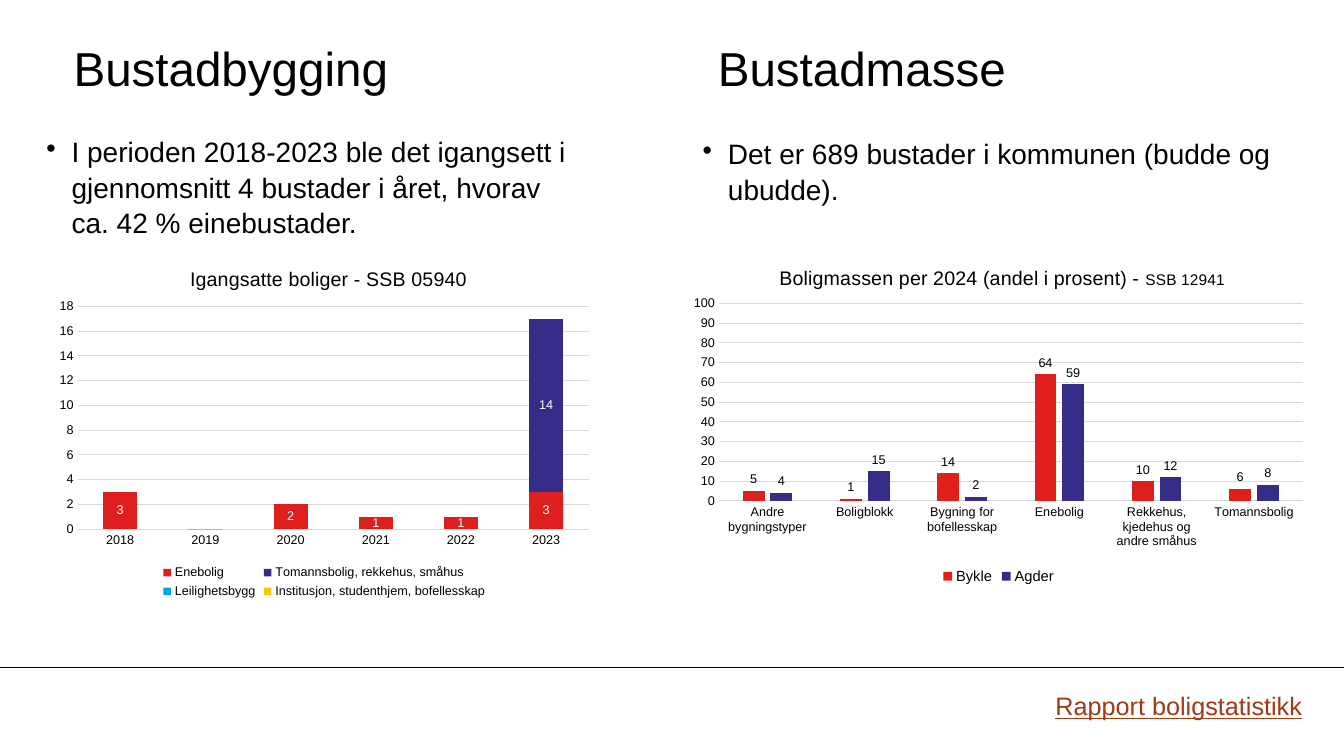
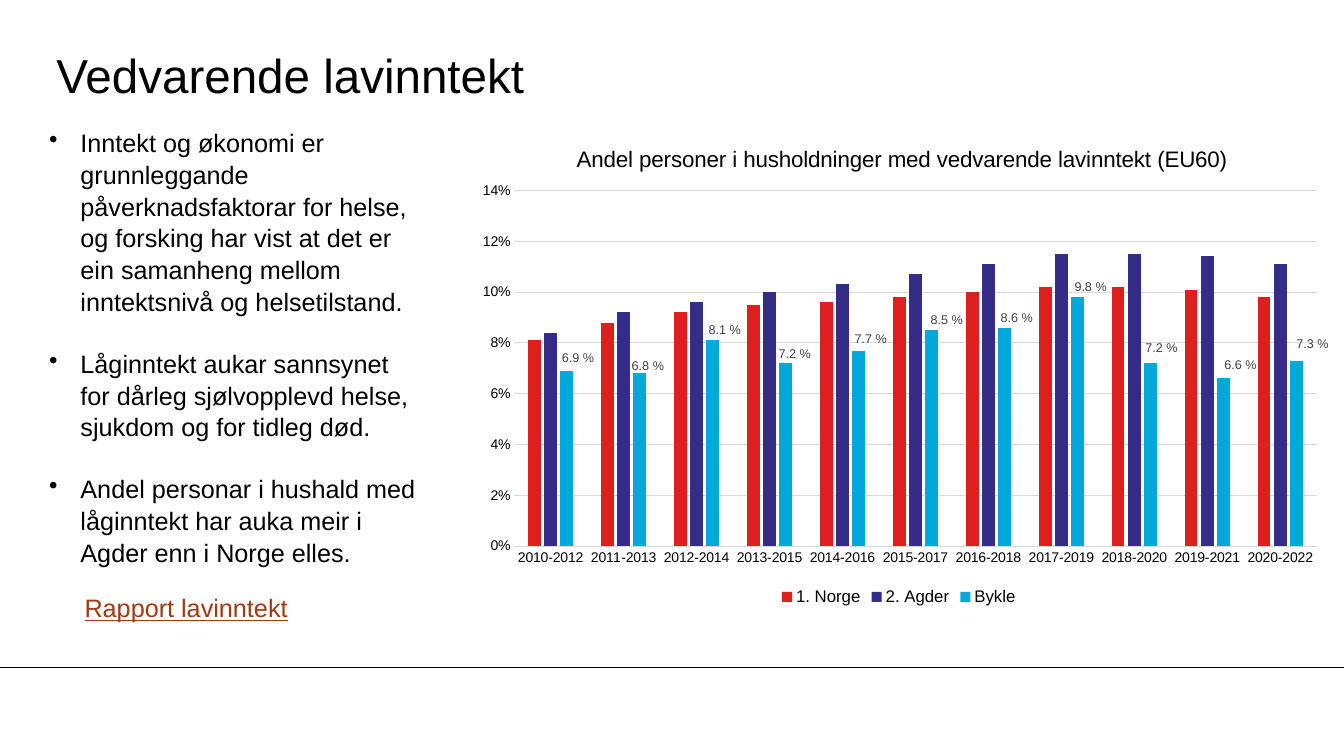
import pptx
import pptx.chart.data
import pptx.dml.color
import pptx.enum.chart
import pptx.enum.shapes
import pptx.enum.text
import pptx.oxml
import pptx.oxml.ns
import pptx.util
from lxml import etree

Inches, Pt = pptx.util.Inches, pptx.util.Pt
XL = pptx.enum.chart
ANCHOR = pptx.enum.text.MSO_ANCHOR

WIDTH, HEIGHT = 13.33, 7.5
FOOTER_LINE = 6.62
FONT = "Arial"
COLORS = {
    "text": "000000", "link": "9F3A14", "grid": "D9D9D9", "white": "FFFFFF", "label": "404040",
    "red": "DF1F1D", "indigo": "342C86", "cyan": "00A9DA", "yellow": "FAC800",
}
SERIES_COLORS = ("red", "indigo", "cyan", "yellow")

# Boxes are (left, top, width, height) in inches on the slide.
SLIDES = [
    {
        "title": ("Bustadbygging", (0.73, 0.29, 4.97, 0.75)),
        "second_title": ("Bustadmasse", (7.12, 0.29, 4.97, 0.75)),
        "bullets": [
            {"items": ["I perioden 2018-2023 ble det igangsett i gjennomsnitt 4 bustader "
                       "i året, hvorav ca. 42 % einebustader."],
             "box": (0.46, 1.32, 5.25, 1.11), "size": 20, "indent": 0.25, "inset": 0},
            {"items": ["Det er 689 bustader i kommunen (budde og ubudde)."],
             "box": (6.97, 1.34, 5.86, 0.84), "size": 20, "indent": 0.25, "inset": 0},
        ],
        "link": ("Rapport boligstatistikk", (10.37, 6.8, 2.65, 0.4)),
        "charts": [
            {
                "title": [("Igangsatte boliger - SSB 05940", 14)],
                "title_at": (1.85, 2.61),
                "box": (0.48, 2.43, 5.47, 3.55), "plot": (0.77, 3.04, 5.07, 2.21),
                "type": XL.XL_CHART_TYPE.COLUMN_STACKED, "gap": 150, "overlap": 100,
                "axis": (18, 2, "General"), "axis_size": 9, "legend_size": 9,
                "categories": ["2018", "2019", "2020", "2021", "2022", "2023"],
                "series": {
                    "Enebolig": (3, 0, 2, 1, 1, 3),
                    "Tomannsbolig, rekkehus, småhus": (0, 0, 0, 0, 0, 14),
                    "Leilighetsbygg": (0,) * 6,
                    "Institusjon, studenthjem, bofellesskap": (0,) * 6,
                },
                "labels": {"series": ("Enebolig", "Tomannsbolig, rekkehus, småhus"),
                           "color": "white", "fmt": "0;;",
                           "position": XL.XL_LABEL_POSITION.CENTER},
            },
            {
                "title": [("Boligmassen per 2024 (andel i prosent) - ", 14), ("SSB 12941", 11)],
                "title_at": (7.7, 2.61),
                "box": (6.76, 2.43, 6.29, 3.41), "plot": (7.13, 3.01, 5.79, 1.96),
                "type": XL.XL_CHART_TYPE.COLUMN_CLUSTERED, "gap": 219, "overlap": -27,
                "axis": (100, 10, "General"), "axis_size": 9, "legend_size": 10.5,
                "categories": ["Andre bygningstyper", "Boligblokk", "Bygning for bofellesskap",
                               "Enebolig", "Rekkehus, kjedehus og andre småhus", "Tomannsbolig"],
                "series": {"Bykle": (5, 1, 14, 64, 10, 6), "Agder": (4, 15, 2, 59, 12, 8)},
                "labels": {"series": ("Bykle", "Agder"), "color": "text", "fmt": "0",
                           "position": XL.XL_LABEL_POSITION.OUTSIDE_END},
            },
        ],
    },
    {
        "title": ("Vedvarende lavinntekt", (0.56, 0.36, 11.1, 0.75)),
        "bullets": [
            {"items": ["Inntekt og økonomi er grunnleggande påverknadsfaktorar for helse, og "
                       "forsking har vist at det er ein samanheng mellom inntektsnivå og "
                       "helsetilstand.",
                       "Låginntekt aukar sannsynet for dårleg sjølvopplevd helse, sjukdom og "
                       "for tidleg død.",
                       "Andel personar i hushald med låginntekt har auka meir i Agder enn i "
                       "Norge elles."],
             "box": (0.39, 1.2, 3.86, 4.34), "size": 18, "indent": 0.31, "inset": 1},
        ],
        "link": ("Rapport lavinntekt", (0.74, 5.83, 2.65, 0.4)),
        "charts": [
            {
                "title": [("Andel personer i husholdninger med vedvarende lavinntekt (EU60)", 16)],
                "title_at": (5.68, 1.4),
                "box": (4.61, 1.2, 8.61, 4.85), "plot": (5.1, 1.89, 7.96, 3.53),
                "type": XL.XL_CHART_TYPE.COLUMN_CLUSTERED, "gap": 219, "overlap": -27,
                "axis": (0.14, 0.02, "0%"), "axis_size": 10, "legend_size": 12,
                "categories": [f"{year}-{year + 2}" for year in range(2010, 2021)],
                "series": {
                    "1. Norge": [v / 1000 for v in
                                 (81, 88, 92, 95, 96, 98, 100, 102, 102, 101, 98)],
                    "2. Agder": [v / 1000 for v in
                                 (84, 92, 96, 100, 103, 107, 111, 115, 115, 114, 111)],
                    "Bykle": [v / 1000 for v in (69, 68, 81, 72, 77, 85, 86, 98, 72, 66, 73)],
                },
                "labels": {"series": ("Bykle",), "color": "label", "fmt": "0.0\\ %",
                           "position": XL.XL_LABEL_POSITION.OUTSIDE_END,
                           "shifts": [(0.11, -0.01), (0.08, 0.04), (0.12, 0.01), (0.09, 0.02),
                                      (0.12, 0), (0.15, 0.01), (0.12, 0.02), (0.13, 0.01),
                                      (0.11, -0.04), (0.17, -0.02), (0.16, -0.05)]},
            },
        ],
    },
]


def rgb(name):
    return pptx.dml.color.RGBColor.from_string(COLORS[name])


def inches(box):
    return [Inches(v) for v in box]


def style_font(font, size, color="text", underline=None):
    font.name, font.size, font.underline = FONT, Pt(size), underline
    font.color.rgb = rgb(color)


def write(tf, items, size, color="text", underline=None, anchor=ANCHOR.TOP, inset=1, indent=0):
    """Fill a text frame with one paragraph per item; an indent makes them bullets."""
    tf.word_wrap, tf.vertical_anchor = True, anchor
    tf.auto_size = pptx.enum.text.MSO_AUTO_SIZE.NONE
    tf.margin_left = tf.margin_right = Inches(0.1 * inset)
    tf.margin_top = tf.margin_bottom = Inches(0.05 * inset)
    for i, item in enumerate(items):
        p = tf.add_paragraph() if i else tf.paragraphs[0]
        p.alignment = pptx.enum.text.PP_ALIGN.LEFT
        if indent:
            pPr = p._p.get_or_add_pPr()
            pPr.set("marL", str(Inches(indent)))
            pPr.set("indent", str(-Inches(indent)))
            etree.SubElement(pPr, pptx.oxml.ns.qn("a:buChar")).set("char", "•")
            p.line_spacing = 1.05
            p.space_before = Pt(1.2 * size if i else 0)
        r = p.add_run()
        r.text = item
        style_font(r.font, size, color, underline)


def add_text(slide, items, box, size, **fmt):
    write(slide.shapes.add_textbox(*inches(box)).text_frame, items, size, **fmt)


def set_layout(parent, index, **values):
    """Give a chart element a manual layout, as child number index."""
    for old in parent.xpath("c:layout"):
        parent.remove(old)
    layout = pptx.oxml.parse_xml(
        f"<c:layout {pptx.oxml.ns.nsdecls('c')}><c:manualLayout/></c:layout>")
    for tag, value in values.items():
        etree.SubElement(layout[0], pptx.oxml.ns.qn(f"c:{tag}")).set("val", str(value))
    parent.insert(index, layout)


def add_labels(chart, series, size, color, fmt, position, shifts=()):
    """Show values on a series; shifts move single labels by shares of the chart."""
    labels = series.data_labels
    labels.show_value, labels.position = True, position
    labels.number_format, labels.number_format_is_linked = fmt, False
    style_font(labels.font, size, color)
    for i, (dx, dy) in enumerate(shifts):
        label = series.points[i].data_label
        style_font(label.font, size, color)
        label.position = position
        set_layout(chart._chartSpace.xpath(f"//c:dLbl[c:idx/@val='{i}']")[0], 1, x=dx, y=dy)


def style_axes(chart, size, axis):
    cat, val = chart.category_axis, chart.value_axis
    for ax in (cat, val):
        ax.major_tick_mark = ax.minor_tick_mark = XL.XL_TICK_MARK.NONE
        style_font(ax.tick_labels.font, size)
    val.minimum_scale = 0
    val.maximum_scale, val.major_unit, val.tick_labels.number_format = axis
    val.tick_labels.number_format_is_linked = False
    val.format.line.fill.background()
    for line in (cat.format.line, val.major_gridlines.format.line):
        line.color.rgb, line.width = rgb("grid"), Pt(0.75)


def add_chart(slide, c):
    data = pptx.chart.data.CategoryChartData()
    data.categories = c["categories"]
    for name, values in c["series"].items():
        data.add_series(name, values)
    chart = slide.shapes.add_chart(c["type"], *inches(c["box"]), data).chart
    style_font(chart.font, 10)
    style_axes(chart, c["axis_size"], c["axis"])

    p = chart.chart_title.text_frame.paragraphs[0]
    for text, size in c["title"]:
        r = p.add_run()
        r.text = text
        style_font(r.font, size)
        r.font.bold = False

    chart.has_legend = True
    chart.legend.position = XL.XL_LEGEND_POSITION.BOTTOM
    chart.legend.include_in_layout = False
    style_font(chart.legend.font, c["legend_size"])

    left, top, width, height = c["box"]
    labels = dict(c["labels"])
    labelled = labels.pop("series")
    labels["shifts"] = [(dx / width, dy / height) for dx, dy in labels.get("shifts", ())]
    plot = chart.plots[0]
    plot.gap_width, plot.overlap, plot.vary_by_categories = c["gap"], c["overlap"], False
    for series, color in zip(plot.series, SERIES_COLORS):
        series.format.fill.solid()
        series.format.fill.fore_color.rgb = rgb(color)
        series.invert_if_negative = False
        if series.name in labelled:
            add_labels(chart, series, 9, **labels)

    root = chart._chartSpace
    x, y = c["title_at"]
    set_layout(root.xpath("c:chart/c:title")[0], 1, xMode="edge", yMode="edge",
               x=(x - left) / width, y=(y - top) / height)
    x, y, w, h = c["plot"]
    set_layout(root.xpath("c:chart/c:plotArea")[0], 0, layoutTarget="inner",
               xMode="edge", yMode="edge", x=(x - left) / width, y=(y - top) / height,
               w=w / width, h=h / height)


def add_footer_line(slide):
    y = Inches(FOOTER_LINE)
    line = slide.shapes.add_connector(
        pptx.enum.shapes.MSO_CONNECTOR.STRAIGHT, 0, y, Inches(WIDTH), y)
    line.line.color.rgb, line.line.width = rgb("text"), Pt(0.75)
    etree.SubElement(line._element.spPr, pptx.oxml.ns.qn("a:effectLst"))


def add_slide(prs, content):
    slide = prs.slides.add_slide(prs.slide_layouts[5])
    add_footer_line(slide)
    heading = {"size": 34, "anchor": ANCHOR.MIDDLE, "inset": 0}
    text, box = content["title"]
    title = slide.shapes.title
    title.left, title.top, title.width, title.height = inches(box)
    write(title.text_frame, [text], **heading)
    if "second_title" in content:
        text, box = content["second_title"]
        add_text(slide, [text], box, **heading)
    for bullets in content["bullets"]:
        add_text(slide, **bullets)
    text, box = content["link"]
    add_text(slide, [text], box, 18, color="link", underline=True)
    for chart in content["charts"]:
        add_chart(slide, chart)


def main():
    prs = pptx.Presentation()
    prs.slide_width, prs.slide_height = Inches(WIDTH), Inches(HEIGHT)
    for content in SLIDES:
        add_slide(prs, content)
    prs.save("out.pptx")


if __name__ == "__main__":
    main()
